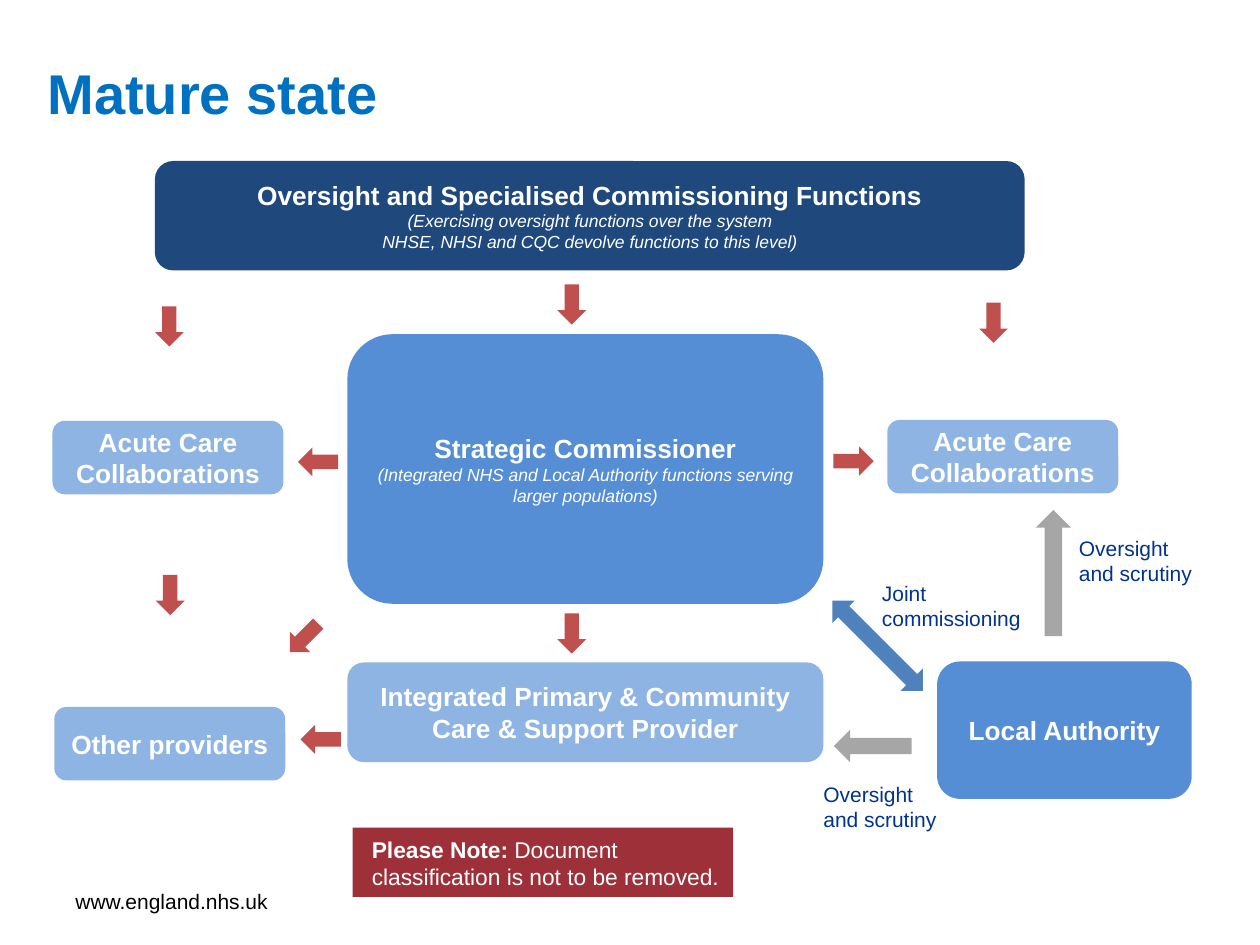
from pptx import Presentation
from pptx.dml.color import RGBColor
from pptx.enum.shapes import MSO_SHAPE as Preset
from pptx.enum.text import MSO_ANCHOR as Anchor, PP_ALIGN as Align
from pptx.util import Pt

NAVY, BLUE, PALE = "1F497D", "558ED5", "8EB4E3"
RED, GREY, STEEL, MAROON = "C0504D", "A6A6A6", "4F81BD", "9E3039"
HEADING = {"size": Pt(15), "bold": True, "color": "FFFFFF"}
DETAIL = {"size": Pt(10), "italic": True, "color": "FFFFFF"}
LABEL = {"size": Pt(12), "color": "00338D"}
TITLE = {"size": Pt(32), "bold": True, "color": "0070C0"}
FOOTER = {"size": Pt(12), "color": "000000"}
NOTE = {"size": Pt(13), "color": "FFFFFF"}
INSET = (4.5, 4.5, 4.5, 4.5)
ARROW_SIZE = (16.5, 23)
PROVIDER_SIZE = (132, 42)


def color(value):
    """Turn a hex string into a colour."""
    return RGBColor.from_string(value)


def write(shape, paragraphs, inset=INSET, anchor=Anchor.MIDDLE, align=Align.LEFT, after=0):
    """Fill a shape with paragraphs, each a list of (text, format) runs."""
    frame = shape.text_frame
    margins = zip(("left", "top", "right", "bottom"), inset)
    settings = {f"margin_{side}": Pt(value) for side, value in margins}
    for name, value in {**settings, "word_wrap": True, "vertical_anchor": anchor}.items():
        setattr(frame, name, value)
    for index, runs in enumerate(paragraphs):
        paragraph = frame.add_paragraph() if index else frame.paragraphs[0]
        paragraph.alignment = align
        paragraph.space_after = Pt(after)
        for text, style in runs:
            run = paragraph.add_run()
            run.text = text
            for name, value in {"name": "Arial", **style}.items():
                if name == "color":
                    run.font.color.rgb = color(value)
                else:
                    setattr(run.font, name, value)


def add_block(slide, preset, box, fill, rotation=0):
    """Add a plain filled shape without line or shadow."""
    shape = slide.shapes.add_shape(preset, *map(Pt, box))
    shape.shadow.inherit = False
    shape.fill.solid()
    shape.fill.fore_color.rgb = color(fill)
    shape.line.fill.background()
    shape.rotation = rotation
    return shape


def add_body(slide, box, fill, heading, *details):
    """Add a rounded box naming an organisation, with detail lines."""
    shape = add_block(slide, Preset.ROUNDED_RECTANGLE, box, fill)
    paragraphs = [[(heading, HEADING)]] + [[(line, DETAIL)] for line in details]
    write(shape, paragraphs, align=Align.CENTER)


def add_text(slide, box, text, style, **layout):
    """Add a text box holding one run."""
    write(slide.shapes.add_textbox(*map(Pt, box)), [[(text, style)]], **layout)


def add_flow(slide, left, top, rotation=0):
    """Add a small red arrow, pointing down unless rotated."""
    add_block(slide, Preset.DOWN_ARROW, (left, top, *ARROW_SIZE), RED, rotation)


def add_page_text(slide, box):
    """Place the title, web address and classification note."""
    left, top, _, height = box
    inset = (7.2, 3.6, 7.2, 3.6)
    add_text(slide, (left + 20, top + 26.5, 580, 52.5), "Mature state", TITLE, inset=inset)
    add_text(slide, (left + 36, top + height - 39.5, 168, 29), "www.england.nhs.uk",
             FOOTER, inset=inset)
    note = add_block(slide, Preset.RECTANGLE,
                     (left + 201.5, top + height - 67, 217.5, 39.5), MAROON)
    runs = [("Please Note: ", {**NOTE, "bold": True}),
            ("Document classification is not to be removed.", NOTE)]
    write(note, [runs], inset=(11, 4.5, 8, 4.5), anchor=Anchor.TOP)


def add_oversight(slide, box):
    """Place the oversight banner and the arrows leaving it."""
    left, top, width, height = box
    add_body(slide, box, NAVY, "Oversight and Specialised Commissioning Functions",
             "(Exercising oversight functions over the system",
             "NHSE, NHSI and CQC devolve functions to this level)")
    for across, gap in ((0, 20.5), (230, 8), (471, 18.5)):
        add_flow(slide, left + across, top + height + gap)


def add_commissioning(slide, box):
    """Place the commissioner above the integrated provider."""
    left, top, width, height = box
    add_body(slide, (left, top + height - 57, width, 57), PALE,
             "Integrated Primary & Community Care & Support Provider")
    add_body(slide, (left, top, width, 154), BLUE, "Strategic Commissioner",
             "(Integrated NHS and Local Authority functions serving larger populations)")
    flows = ((120, 159.5, 0), (281, 61, 270), (-25, 61.5, 90), (-23.5, 220, 90), (-33, 162, 45))
    for across, down, rotation in flows:
        add_flow(slide, left + across, top + down, rotation)


def add_providers(slide, box):
    """Place the left-hand providers and the arrow between them."""
    left, top, _, height = box
    add_body(slide, (left, top, *PROVIDER_SIZE), PALE, "Acute Care Collaborations")
    add_flow(slide, left + 59, top + 88)
    add_body(slide, (left + 1, top + height - PROVIDER_SIZE[1], *PROVIDER_SIZE), PALE,
             "Other providers")


def add_local_authority(slide, box):
    """Place the right-hand provider, local authority and their links."""
    left, top, width, height = box
    add_body(slide, (left + 42, top, *PROVIDER_SIZE), PALE, "Acute Care Collaborations")
    add_body(slide, (left + width - 145.5, top + height - 78.5, 145.5, 78.5), BLUE,
             "Local Authority")
    links = ((Preset.LEFT_RIGHT_ARROW, (0, 120, 73, 18), STEEL, 45),
             (Preset.UP_ARROW, (127, 51.5, 20, 72), GREY, 0),
             (Preset.LEFT_ARROW, (11.5, 177, 44.5, 18.5), GREY, 0))
    for preset, (across, down, *size), fill, rotation in links:
        add_block(slide, preset, (left + across, top + down, *size), fill, rotation)
    labels = (("Joint commissioning", (34.5, 87, 96.5, 30)),
              ("Oversight and scrutiny", (147, 61.5, 78.5, 61)),
              ("Oversight and scrutiny", (1, 202, 78.5, 61)))
    for text, (across, down, *size) in labels:
        add_text(slide, (left + across, top + down, *size), text, LABEL,
                 anchor=Anchor.TOP, after=6)


def main():
    """Build and save the slide."""
    presentation = Presentation()
    presentation.slide_width, presentation.slide_height = Pt(720), Pt(540)
    slide = presentation.slides.add_slide(presentation.slide_layouts[6])
    add_page_text(slide, (0, 0, 720, 540))
    add_oversight(slide, (88.5, 92, 497, 62.5))
    add_commissioning(slide, (198.5, 191, 272, 244.5))
    add_providers(slide, (30, 240.5, 133, 205.5))
    add_local_authority(slide, (465, 240, 216, 216.5))
    presentation.save("out.pptx")


if __name__ == "__main__":
    main()
